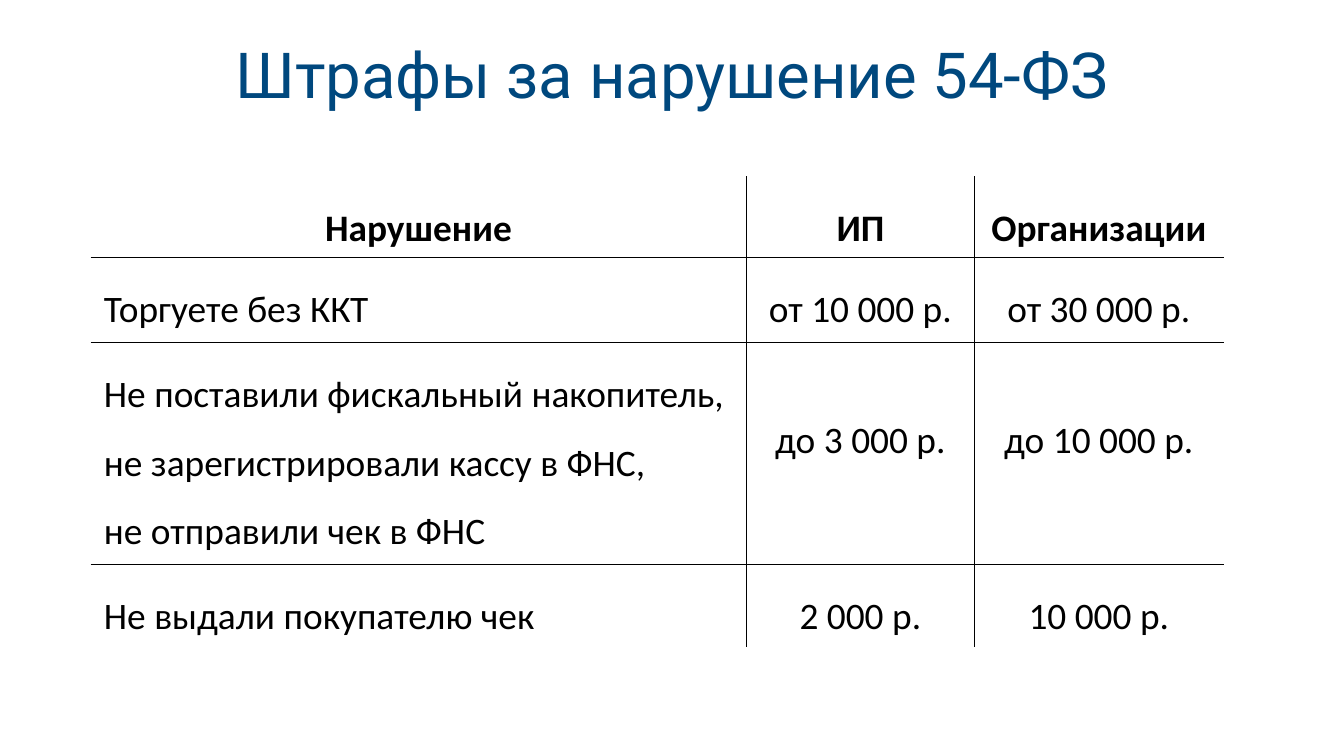
from lxml.etree import SubElement
from pptx import Presentation
from pptx.dml.color import RGBColor
from pptx.enum.text import MSO_ANCHOR, PP_ALIGN
from pptx.oxml.ns import qn
from pptx.util import Pt

COLORS = {"title": "00487E", "text": "000000", "rule": "000000"}

TITLE_FONT = {"name": "Roboto", "size": Pt(34), "bold": False}
BODY_FONT = {"name": "Calibri", "size": Pt(20), "bold": False}
HEADER_FONT = {**BODY_FONT, "bold": True}

CENTERED = {"alignment": PP_ALIGN.CENTER, "line_spacing": 1.5}
LEFT = {**CENTERED, "alignment": PP_ALIGN.LEFT}
TITLE_LINE = {**CENTERED, "line_spacing": Pt(35)}

NO_MARGINS = dict.fromkeys(
    ("margin_left", "margin_top", "margin_right", "margin_bottom"), 0)
TITLE_FRAME = {**NO_MARGINS, "word_wrap": True,
               "vertical_anchor": MSO_ANCHOR.MIDDLE}
PLAIN_TABLE = {"first_row": False, "horz_banding": False}

COLUMN_WIDTHS = [351.5, 122, 133.5]
ROW_HEIGHTS = [43.5, 45.5, 119, 44]
TALL_ROW = 2
TALL_ROW_AMOUNT_MARGIN = Pt(28.2)
RULE_WIDTH = Pt(1)

FINES = [
    ["Нарушение", "ИП", "Организации"],
    ["Торгуете без ККТ", "от 10 000 р.", "от 30 000 р."],
    ["Не поставили фискальный накопитель, не зарегистрировали кассу в ФНС,\n"
     "не отправили чек в ФНС", "до 3 000 р.", "до 10 000 р."],
    ["Не выдали покупателю чек", "2 000 р.", "10 000 р."],
]


def apply_format(target, values):
    for name, value in values.items():
        setattr(target, name, value)


def write_text(frame, text, paragraph_format, font_format, color):
    frame.text = text
    for paragraph in frame.paragraphs:
        apply_format(paragraph, paragraph_format)
        for run in paragraph.runs:
            apply_format(run.font, font_format)
            run.font.color.rgb = RGBColor.from_string(COLORS[color])


def add_title(slide, text):
    title = slide.shapes.add_textbox(Pt(22.5), Pt(13.5), Pt(675), Pt(57))
    apply_format(title.text_frame, TITLE_FRAME)
    write_text(title.text_frame, text, TITLE_LINE, TITLE_FONT, "title")


def set_borders(cell, ruled_sides):
    """Rule the given sides (L, R, T, B) and clear the others."""
    properties = cell._tc.get_or_add_tcPr()
    for position, side in enumerate("LRTB"):
        border = SubElement(properties, qn(f"a:ln{side}"), w=str(RULE_WIDTH))
        if side in ruled_sides:
            fill = SubElement(border, qn("a:solidFill"))
            SubElement(fill, qn("a:srgbClr"), val=COLORS["rule"])
        else:
            SubElement(border, qn("a:noFill"))
        properties.insert(position, border)


def inner_sides(row, column):
    last_row, last_column = len(ROW_HEIGHTS) - 1, len(COLUMN_WIDTHS) - 1
    inside = {"L": column > 0, "R": column < last_column,
              "T": row > 0, "B": row < last_row}
    return [side for side, is_inside in inside.items() if is_inside]


def add_fines_table(slide):
    table = slide.shapes.add_table(
        len(ROW_HEIGHTS), len(COLUMN_WIDTHS), Pt(48.5), Pt(94.5),
        Pt(sum(COLUMN_WIDTHS)), Pt(sum(ROW_HEIGHTS))).table
    apply_format(table, PLAIN_TABLE)
    for column, width in zip(table.columns, COLUMN_WIDTHS):
        column.width = Pt(width)
    for row, height in zip(table.rows, ROW_HEIGHTS):
        row.height = Pt(height)

    for row, texts in enumerate(FINES):
        for column, text in enumerate(texts):
            cell = table.cell(row, column)
            is_header, is_amount = row == 0, column > 0
            write_text(cell.text_frame, text,
                       CENTERED if is_header or is_amount else LEFT,
                       HEADER_FONT if is_header else BODY_FONT, "text")
            if row == TALL_ROW and is_amount:
                cell.margin_top = TALL_ROW_AMOUNT_MARGIN
            cell.fill.background()
            set_borders(cell, inner_sides(row, column))


def main():
    presentation = Presentation()
    presentation.slide_width, presentation.slide_height = Pt(720), Pt(405)
    slide = presentation.slides.add_slide(presentation.slide_layouts[6])
    add_title(slide, "Штрафы за нарушение 54-ФЗ")
    add_fines_table(slide)
    presentation.save("out.pptx")


if __name__ == "__main__":
    main()
